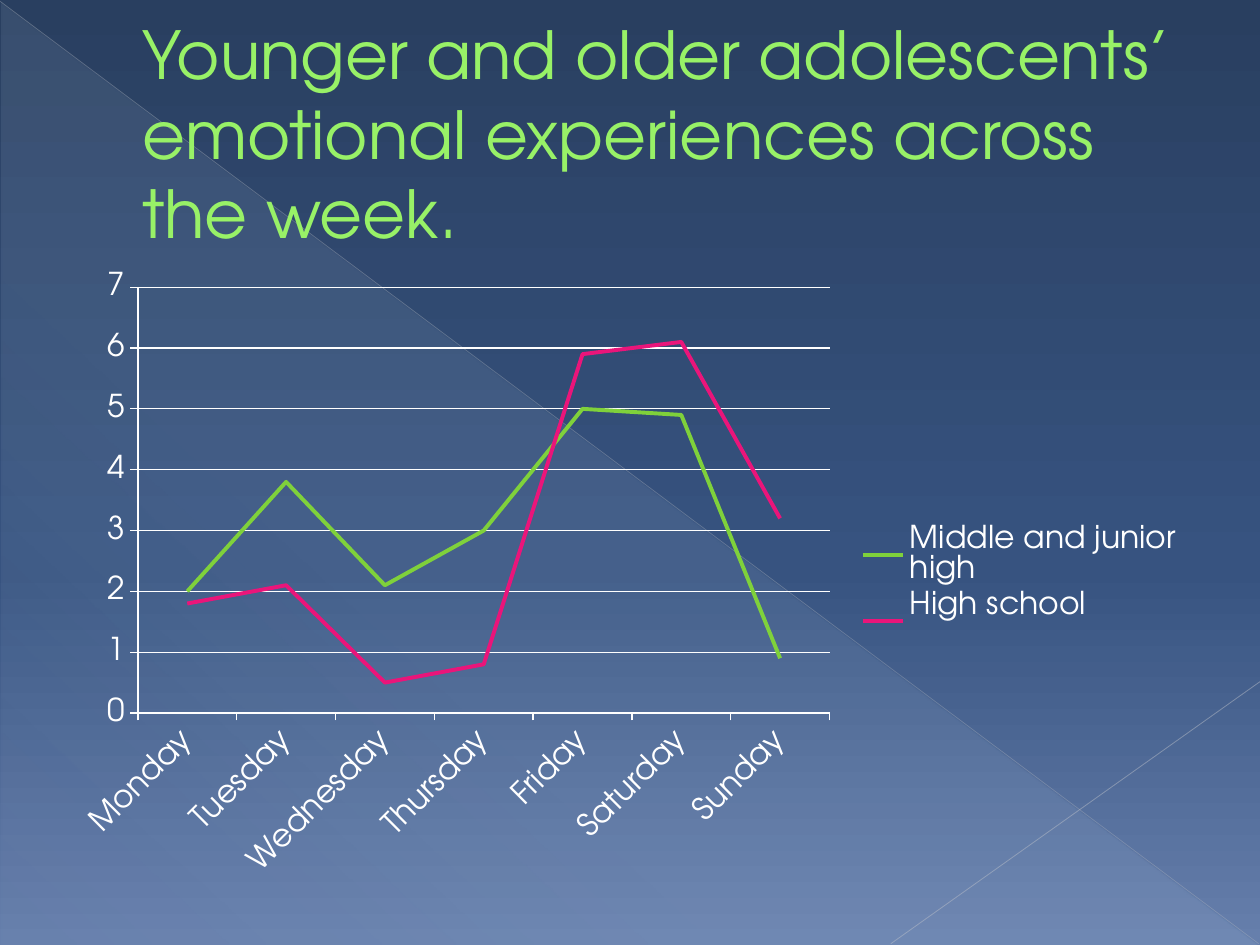
from dataclasses import dataclass

from lxml.etree import SubElement
from pptx import Presentation
from pptx.chart.data import CategoryChartData
from pptx.dml.color import RGBColor
from pptx.enum.chart import XL_CHART_TYPE as ChartType
from pptx.enum.chart import XL_LEGEND_POSITION as LegendPosition
from pptx.enum.chart import XL_MARKER_STYLE as MarkerStyle
from pptx.enum.chart import XL_TICK_MARK as TickMark
from pptx.enum.shapes import MSO_CONNECTOR as Connector
from pptx.enum.shapes import MSO_SHAPE as Shape
from pptx.enum.text import MSO_ANCHOR as Anchor
from pptx.oxml.ns import qn
from pptx.util import Inches, Pt


@dataclass(frozen=True)
class Theme:
    font: str = "TeX Gyre Adventor"
    title_size: float = 37.8
    chart_size: float = 18
    title: str = "98F167"
    text: str = "FFFFFF"
    triangle: str = "D6ECFF"


@dataclass(frozen=True)
class Stop:
    position: int
    color: str
    opacity: int = 100


@dataclass(frozen=True)
class Ray:
    start: tuple[float, float]
    end: tuple[float, float]
    color: str
    width: float
    opacity: int


@dataclass(frozen=True)
class Series:
    name: str
    values: tuple[float, ...]
    color: str


THEME = Theme()
BACKGROUND = (Stop(0, "293F60"), Stop(60, "375380"), Stop(100, "667FAC"))
TRIANGLE = (
    Stop(0, THEME.triangle, 10),
    Stop(70, THEME.triangle, 8),
    Stop(100, THEME.triangle, 1),
)
RAYS = (
    Ray((0, 0.01), (9.99, 7.49), "B7BCC5", 0.39, 35),
    Ray((10, 5.41), (7.07, 7.49), "BFC3CB", 0.47, 45),
)
TITLE = "Younger and older adolescents’ emotional experiences across the week."
DAYS = ("Monday", "Tuesday", "Wednesday", "Thursday", "Friday", "Saturday", "Sunday")
SERIES = (
    Series("Middle and junior high", (2, 3.8, 2.1, 3, 5, 4.9, 0.9), "7FD13B"),
    Series("High school", (1.8, 2.1, 0.5, 0.8, 5.9, 6.1, 3.2), "EA157A"),
)
PLOT_AREA = {"x": 0.066, "y": 0.044, "w": 0.61, "h": 0.676}


def rgb(color: str) -> RGBColor:
    return RGBColor.from_string(color)


def add_alpha(color_element, opacity: int) -> None:
    if opacity < 100:
        SubElement(color_element, qn("a:alpha"), val=str(opacity * 1000))


def set_gradient(fill, owner, stops: tuple[Stop, ...], angle: int) -> None:
    fill.gradient()
    gradient = next(owner.iter(qn("a:gradFill")))
    for child in list(gradient):
        gradient.remove(child)
    stop_list = SubElement(gradient, qn("a:gsLst"))
    for stop in stops:
        entry = SubElement(stop_list, qn("a:gs"), pos=str(stop.position * 1000))
        add_alpha(SubElement(entry, qn("a:srgbClr"), val=stop.color), stop.opacity)
    SubElement(gradient, qn("a:lin"), ang=str(angle * 60000), scaled="0")


def add_ray(page, ray: Ray) -> None:
    points = [Inches(value) for value in ray.start + ray.end]
    line = page.shapes.add_connector(Connector.STRAIGHT, *points)
    line.line.width = Pt(ray.width)
    line.line.color.rgb = rgb(ray.color)
    add_alpha(next(line.element.iter(qn("a:srgbClr"))), ray.opacity)
    SubElement(line.element.spPr, qn("a:effectLst"))


def add_backdrop(page) -> None:
    set_gradient(page.background.fill, page.element, BACKGROUND, 90)
    triangle = page.shapes.add_shape(
        Shape.RIGHT_TRIANGLE, Inches(0.01), Inches(0.02), Inches(9.98), Inches(7.48)
    )
    triangle.shadow.inherit = False
    triangle.line.fill.background()
    set_gradient(triangle.fill, triangle.element, TRIANGLE, 133)
    for ray in RAYS:
        add_ray(page, ray)


def add_title(page) -> None:
    box = page.shapes.add_textbox(Inches(0.5), Inches(0.29), Inches(9), Inches(1.53))
    frame = box.text_frame
    frame.word_wrap = True
    frame.vertical_anchor = Anchor.MIDDLE
    para = frame.paragraphs[0]
    para._p.get_or_add_pPr().set("marL", str(Inches(0.53)))
    span = para.add_run()
    span.text = TITLE
    span.font.name = THEME.font
    span.font.size = Pt(THEME.title_size)
    span.font.color.rgb = rgb(THEME.title)


def style_line(line, color: str, width: float) -> None:
    line.color.rgb = rgb(color)
    line.width = Pt(width)


def place_plot(chart) -> None:
    plot_area = next(chart.element.iter(qn("c:plotArea")))
    for old in plot_area.findall(qn("c:layout")):
        plot_area.remove(old)
    layout = SubElement(plot_area, qn("c:layout"))
    plot_area.insert(0, layout)
    manual = SubElement(layout, qn("c:manualLayout"))
    SubElement(manual, qn("c:layoutTarget"), val="inner")
    for side in "xy":
        SubElement(manual, qn(f"c:{side}Mode"), val="edge")
    for side, share in PLOT_AREA.items():
        SubElement(manual, qn(f"c:{side}"), val=str(share))


def add_line_chart(page) -> None:
    data = CategoryChartData()
    data.categories = DAYS
    for series in SERIES:
        data.add_series(series.name, series.values)
    chart = page.shapes.add_chart(
        ChartType.LINE, Inches(0.5), Inches(2.06), Inches(9), Inches(5), data
    ).chart
    chart.has_title = False
    chart.font.name = THEME.font
    chart.font.size = Pt(THEME.chart_size)
    chart.font.color.rgb = rgb(THEME.text)
    chart.has_legend = True
    chart.legend.position = LegendPosition.RIGHT
    chart.legend.include_in_layout = False

    # Axes and gridlines
    days, scores = chart.category_axis, chart.value_axis
    for axis in (days, scores):
        axis.major_tick_mark = TickMark.OUTSIDE
        axis.minor_tick_mark = TickMark.NONE
        style_line(axis.format.line, THEME.text, 0.75)
    days.tick_labels.font.size = Pt(THEME.chart_size)
    next(days._element.iter(qn("a:bodyPr"))).set("rot", str(-45 * 60000))
    scores.minimum_scale, scores.maximum_scale, scores.major_unit = 0, 7, 1
    scores.has_major_gridlines = True
    style_line(scores.major_gridlines.format.line, THEME.text, 0.75)

    # Series lines
    plot = chart.plots[0]
    plot.vary_by_categories = False
    for drawn, series in zip(plot.series, SERIES):
        drawn.smooth = False
        drawn.marker.style = MarkerStyle.NONE
        style_line(drawn.format.line, series.color, 2.25)
    place_plot(chart)


def main() -> None:
    deck = Presentation()
    deck.slide_width, deck.slide_height = Inches(10), Inches(7.5)
    page = deck.slides.add_slide(deck.slide_layouts[6])
    add_backdrop(page)
    add_title(page)
    add_line_chart(page)
    deck.save("out.pptx")


if __name__ == "__main__":
    main()
